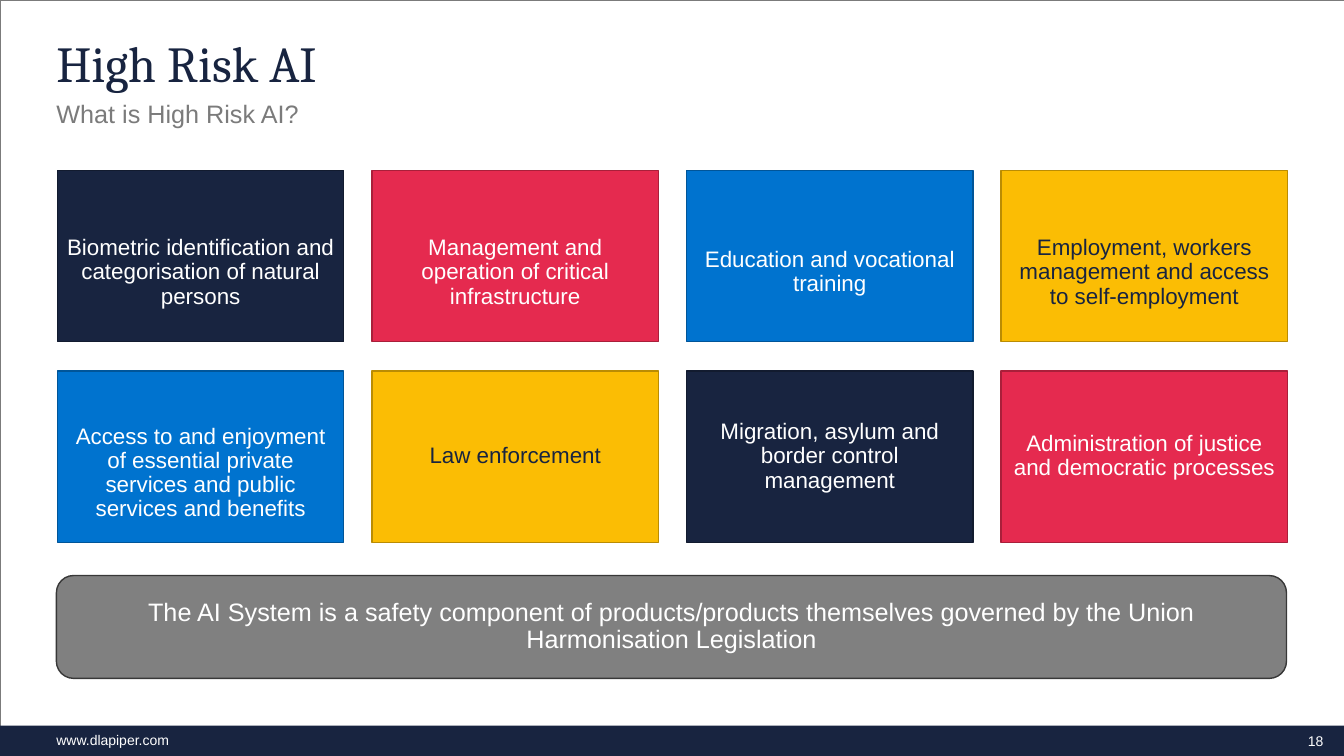
from pptx import Presentation
from pptx.dml.color import RGBColor
from pptx.enum.shapes import MSO_SHAPE
from pptx.enum.text import MSO_ANCHOR, PP_ALIGN
from pptx.util import Inches, Pt

RECTANGLE, ROUNDED = MSO_SHAPE.RECTANGLE, MSO_SHAPE.ROUNDED_RECTANGLE
TOP, MIDDLE = MSO_ANCHOR.TOP, MSO_ANCHOR.MIDDLE
LEFT, CENTER = PP_ALIGN.LEFT, PP_ALIGN.CENTER

WHITE = RGBColor(0xFF, 0xFF, 0xFF)
NAVY = RGBColor(0x18, 0x24, 0x40)
NAVY_EDGE = RGBColor(0x12, 0x1B, 0x2F)
RED = RGBColor(0xE5, 0x2A, 0x4F)
RED_EDGE = RGBColor(0xA9, 0x1F, 0x3A)
BLUE = RGBColor(0x00, 0x73, 0xCF)
BLUE_EDGE = RGBColor(0x00, 0x55, 0x99)
YELLOW = RGBColor(0xFB, 0xBD, 0x04)
YELLOW_EDGE = RGBColor(0xBA, 0x8C, 0x03)
GRAY = RGBColor(0x80, 0x80, 0x80)
GRAY_EDGE = RGBColor(0x38, 0x38, 0x38)
SUBTITLE_GRAY = RGBColor(0x7B, 0x7B, 0x7B)

WIDTH, HEIGHT = 13.33, 7.5
MARGIN, CONTENT_WIDTH = 0.56, 12.2
FOOTER_TOP, FOOTER_HEIGHT = 7.2, 0.3
COLUMNS = 4
CARD_LEFT, CARD_TOP = 0.57, 1.69
CARD_WIDTH, CARD_HEIGHT = 2.84, 1.7
COLUMN_STEP, ROW_STEP = 3.12, 1.99
PADDING, LOWERED_PADDING = 0.07, 0.4

NAVY_STYLE = (NAVY, NAVY_EDGE, WHITE)
RED_STYLE = (RED, RED_EDGE, WHITE)
BLUE_STYLE = (BLUE, BLUE_EDGE, WHITE)
YELLOW_STYLE = (YELLOW, YELLOW_EDGE, NAVY)

# Text, colours, top padding
CARDS = [
    ("Biometric identification and categorisation of natural persons", NAVY_STYLE, LOWERED_PADDING),
    ("Management and operation of critical infrastructure", RED_STYLE, LOWERED_PADDING),
    ("Education and vocational training", BLUE_STYLE, LOWERED_PADDING),
    ("Employment, workers management and access to self-employment", YELLOW_STYLE, LOWERED_PADDING),
    ("Access to and enjoyment of essential private services and public services and benefits",
     BLUE_STYLE, LOWERED_PADDING),
    ("Law enforcement", YELLOW_STYLE, PADDING),
    ("Migration, asylum and border control management", NAVY_STYLE, PADDING),
    ("Administration of justice and democratic processes", RED_STYLE, PADDING),
]


class SlideBuilder:
    body_font = "Arial"
    title_font = "Cambria"

    def __init__(self, slide):
        self.slide = slide

    def fill_text(self, shape, text, size, color, font=None, align=LEFT, anchor=TOP,
                  insets=(0, 0, 0, 0), spacing=1.0):
        """Fill a shape with one paragraph; insets run left, top, right, bottom."""
        frame = shape.text_frame
        frame.word_wrap = True
        frame.vertical_anchor = anchor
        (frame.margin_left, frame.margin_top,
         frame.margin_right, frame.margin_bottom) = map(Inches, insets)
        paragraph = frame.paragraphs[0]
        paragraph.alignment = align
        paragraph.line_spacing = spacing
        run = paragraph.add_run()
        run.text = text
        run.font.name = font or self.body_font
        run.font.size = Pt(size)
        run.font.color.rgb = color

    def text(self, box, text, size, color, **style):
        shape = self.slide.shapes.add_textbox(*map(Inches, box))
        self.fill_text(shape, text, size, color, **style)

    def panel(self, box, fill=None, edge=None, edge_width=1, kind=RECTANGLE):
        shape = self.slide.shapes.add_shape(kind, *map(Inches, box))
        shape.shadow.inherit = False
        if fill is None:
            shape.fill.background()
        else:
            shape.fill.solid()
            shape.fill.fore_color.rgb = fill
        if edge is None:
            shape.line.fill.background()
        else:
            shape.line.color.rgb = edge
            shape.line.width = Pt(edge_width)
        return shape

    def card(self, box, text, style, top_padding):
        fill, edge, color = style
        self.fill_text(self.panel(box, fill, edge), text, 16, color, align=CENTER, anchor=MIDDLE,
                       insets=(PADDING, top_padding, PADDING, PADDING), spacing=0.9)

    def banner(self, box, text):
        shape = self.panel(box, GRAY, GRAY_EDGE, kind=ROUNDED)
        self.fill_text(shape, text, 18, WHITE, align=CENTER, anchor=MIDDLE,
                       insets=(PADDING,) * 4, spacing=0.9)


def main():
    presentation = Presentation()
    presentation.slide_width = Inches(WIDTH)
    presentation.slide_height = Inches(HEIGHT)
    builder = SlideBuilder(presentation.slides.add_slide(presentation.slide_layouts[6]))

    builder.panel((0, 0, WIDTH, HEIGHT), edge=SUBTITLE_GRAY, edge_width=0.15)
    builder.panel((0, FOOTER_TOP, WIDTH, FOOTER_HEIGHT), NAVY)
    builder.text((MARGIN, 7.21, 1.89, 0.27), "www.dlapiper.com", 10, WHITE,
                 insets=(0, 0.05, 0.1, 0.05))
    builder.text((12.77, FOOTER_TOP, 0.56, FOOTER_HEIGHT), "18", 10, WHITE,
                 align=CENTER, anchor=MIDDLE)
    builder.text((MARGIN, 0.98, CONTENT_WIDTH, 0.26), "What is High Risk AI?", 18, SUBTITLE_GRAY)
    builder.text((MARGIN, 0.39, CONTENT_WIDTH, 0.63), "High Risk AI", 36, NAVY,
                 font=builder.title_font, spacing=0.9)

    for index, (text, style, top_padding) in enumerate(CARDS):
        row, column = divmod(index, COLUMNS)
        box = (CARD_LEFT + column * COLUMN_STEP, CARD_TOP + row * ROW_STEP,
               CARD_WIDTH, CARD_HEIGHT)
        builder.card(box, text, style, top_padding)

    builder.banner((MARGIN, 5.71, CONTENT_WIDTH, 1.02),
                   "The AI System is a safety component of products/products themselves "
                   "governed by the Union Harmonisation Legislation")
    presentation.save("out.pptx")


if __name__ == "__main__":
    main()
